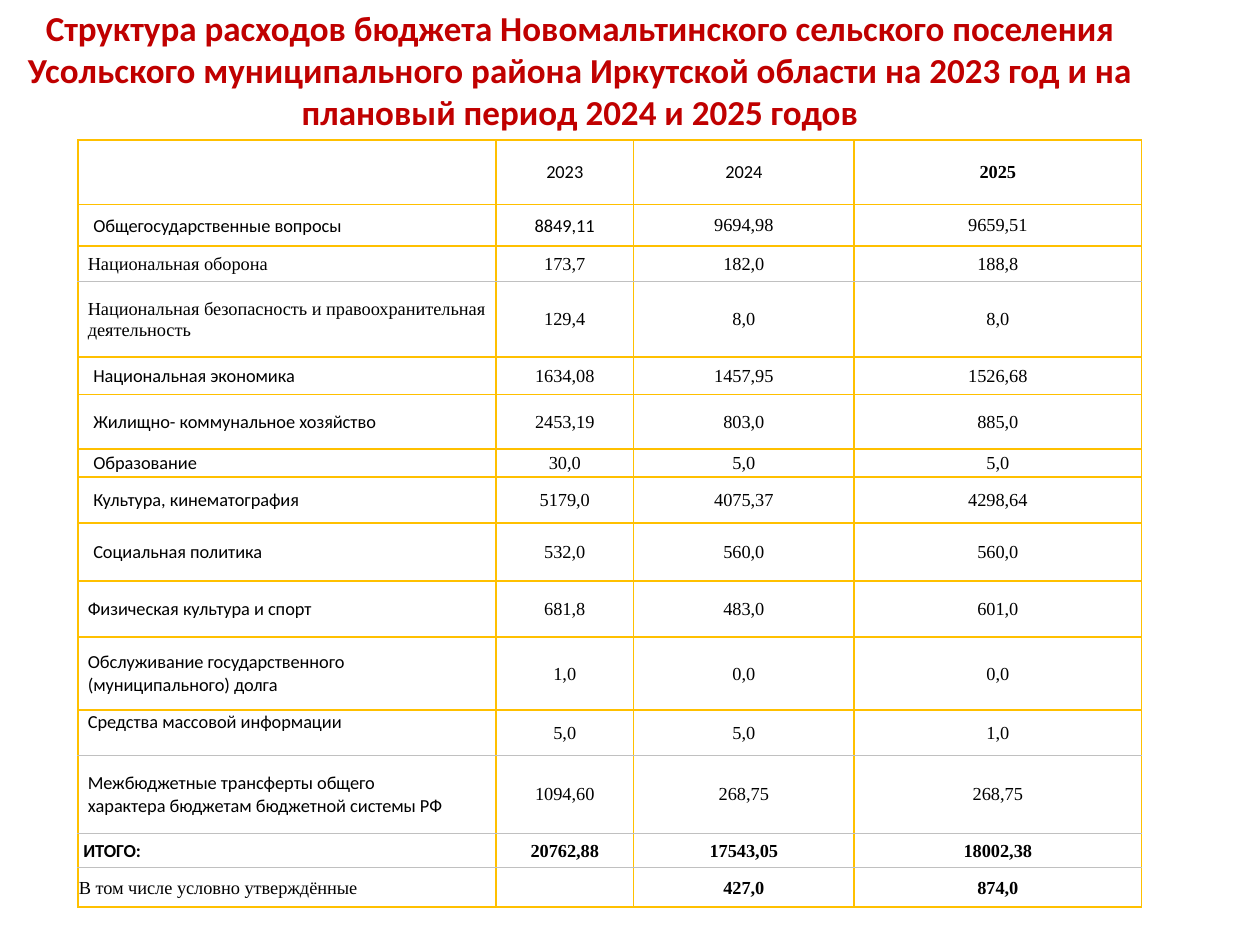
from lxml import etree
from pptx import Presentation
from pptx.dml.color import RGBColor
from pptx.enum import text
from pptx.oxml import ns
from pptx.util import Cm, Pt

COLORS = {"title": "C00000", "text": "000000", "gold": "FFC000", "gray": "C0C0C0"}
SANS, SERIF = "Calibri", "Times New Roman"
TITLE = ("Структура расходов бюджета Новомальтинского сельского поселения "
         "Усольского муниципального района Иркутской области на 2023 год и на "
         "плановый период 2024 и 2025 годов")

COLUMN_WIDTHS = [8.43, 2.77, 4.45, 5.79]
EDGE, LABEL, INDENTED, TOTAL_INDENT = 0.02, 0.2, 0.31, 0.11
# row height, label indent, label font, label, values by year
ROWS = [
    (1.3, LABEL, SANS, "", ["2023", "2024", "2025"]),
    (0.84, INDENTED, SANS, "Общегосударственные вопросы", ["8849,11", "9694,98", "9659,51"]),
    (0.71, LABEL, SERIF, "Национальная оборона", ["173,7", "182,0", "188,8"]),
    (1.53, LABEL, SERIF, "Национальная безопасность и правоохранительная деятельность",
     ["129,4", "8,0", "8,0"]),
    (0.75, INDENTED, SANS, "Национальная экономика", ["1634,08", "1457,95", "1526,68"]),
    (1.1, INDENTED, SANS, "Жилищно- коммунальное хозяйство", ["2453,19", "803,0", "885,0"]),
    (0.57, INDENTED, SANS, "Образование", ["30,0", "5,0", "5,0"]),
    (0.92, INDENTED, SANS, "Культура, кинематография", ["5179,0", "4075,37", "4298,64"]),
    (1.17, INDENTED, SANS, "Социальная политика", ["532,0", "560,0", "560,0"]),
    (1.13, LABEL, SANS, "Физическая культура и спорт", ["681,8", "483,0", "601,0"]),
    (1.47, LABEL, SANS, "Обслуживание государственного (муниципального) долга",
     ["1,0", "0,0", "0,0"]),
    (0.91, LABEL, SANS, "Средства массовой информации", ["5,0", "5,0", "1,0"]),
    (1.58, LABEL, SANS, "Межбюджетные трансферты общего\n"
     "характера бюджетам бюджетной системы РФ", ["1094,60", "268,75", "268,75"]),
    (0.69, TOTAL_INDENT, SANS, "ИТОГО:", ["20762,88", "17543,05", "18002,38"]),
    (0.8, EDGE, SERIF, "В том числе условно утверждённые", ["", "427,0", "874,0"]),
]
MEDIA_ROW, TOTAL_ROW, APPROVED_ROW = 11, 13, 14
GRAY_BELOW = {2, 11, 12, 13}
SANS_VALUES = {(0, 1), (0, 2), (1, 1)}
BOLD_CELLS = {(0, 3), (APPROVED_ROW, 2), (APPROVED_ROW, 3)} | {(TOTAL_ROW, c) for c in range(4)}


def add_text(paragraph, words, size, font, color, bold, align):
    paragraph.alignment = align
    run = paragraph.add_run()
    run.text = words
    run.font.size = Pt(size)
    run.font.name = font
    run.font.bold = bold
    run.font.color.rgb = RGBColor.from_string(color)


def set_borders(cell, row):
    sides = {"L": "gold", "R": "gold",
             "T": "gray" if row - 1 in GRAY_BELOW else "gold",
             "B": "gray" if row in GRAY_BELOW else "gold"}
    properties = cell._tc.get_or_add_tcPr()
    for side, color in sides.items():
        width = Pt(0.5 if color == "gray" else 1)
        line = etree.SubElement(properties, ns.qn("a:ln" + side), w=str(width))
        fill = etree.SubElement(line, ns.qn("a:solidFill"))
        etree.SubElement(fill, ns.qn("a:srgbClr"), val=COLORS[color])


def fill_cell(cell, row, column, words, font, indent):
    set_borders(cell, row)
    cell.fill.background()
    is_label = column == 0
    cell.margin_left = Cm(indent)
    cell.margin_right = Cm(LABEL if is_label and indent >= LABEL else EDGE)
    cell.margin_top, cell.margin_bottom = Cm(EDGE), Cm(0)
    top = is_label and row == MEDIA_ROW
    cell.vertical_anchor = text.MSO_ANCHOR.TOP if top else text.MSO_ANCHOR.MIDDLE
    align = text.PP_ALIGN.LEFT if is_label else text.PP_ALIGN.CENTER
    frame = cell.text_frame
    for number, line in enumerate(words.split("\n")):
        paragraph = frame.add_paragraph() if number else frame.paragraphs[0]
        add_text(paragraph, line, 10.5, font, COLORS["text"], (row, column) in BOLD_CELLS, align)


def add_budget_table(slide):
    heights = [row[0] for row in ROWS]
    table = slide.shapes.add_table(len(ROWS), len(COLUMN_WIDTHS), Cm(1.57), Cm(2.82),
                                   Cm(sum(COLUMN_WIDTHS)), Cm(sum(heights))).table
    table.first_row = table.horz_banding = False
    for column, width in zip(table.columns, COLUMN_WIDTHS):
        column.width = Cm(width)
    for r, (height, indent, label_font, label, values) in enumerate(ROWS):
        table.rows[r].height = Cm(height)
        fill_cell(table.cell(r, 0), r, 0, label, label_font, indent)
        for c, value in enumerate(values, start=1):
            font = SANS if (r, c) in SANS_VALUES else SERIF
            fill_cell(table.cell(r, c), r, c, value, font, EDGE)


def add_title(slide):
    frame = slide.shapes.add_textbox(Cm(-0.33), Cm(0), Cm(24.05), Cm(2.82)).text_frame
    frame.word_wrap = True
    add_text(frame.paragraphs[0], TITLE, 20, SANS, COLORS["title"], True, text.PP_ALIGN.CENTER)


def main():
    presentation = Presentation()
    presentation.slide_width, presentation.slide_height = Cm(25.4), Cm(19.05)
    slide = presentation.slides.add_slide(presentation.slide_layouts[6])
    add_budget_table(slide)
    add_title(slide)
    presentation.save("out.pptx")


if __name__ == "__main__":
    main()
